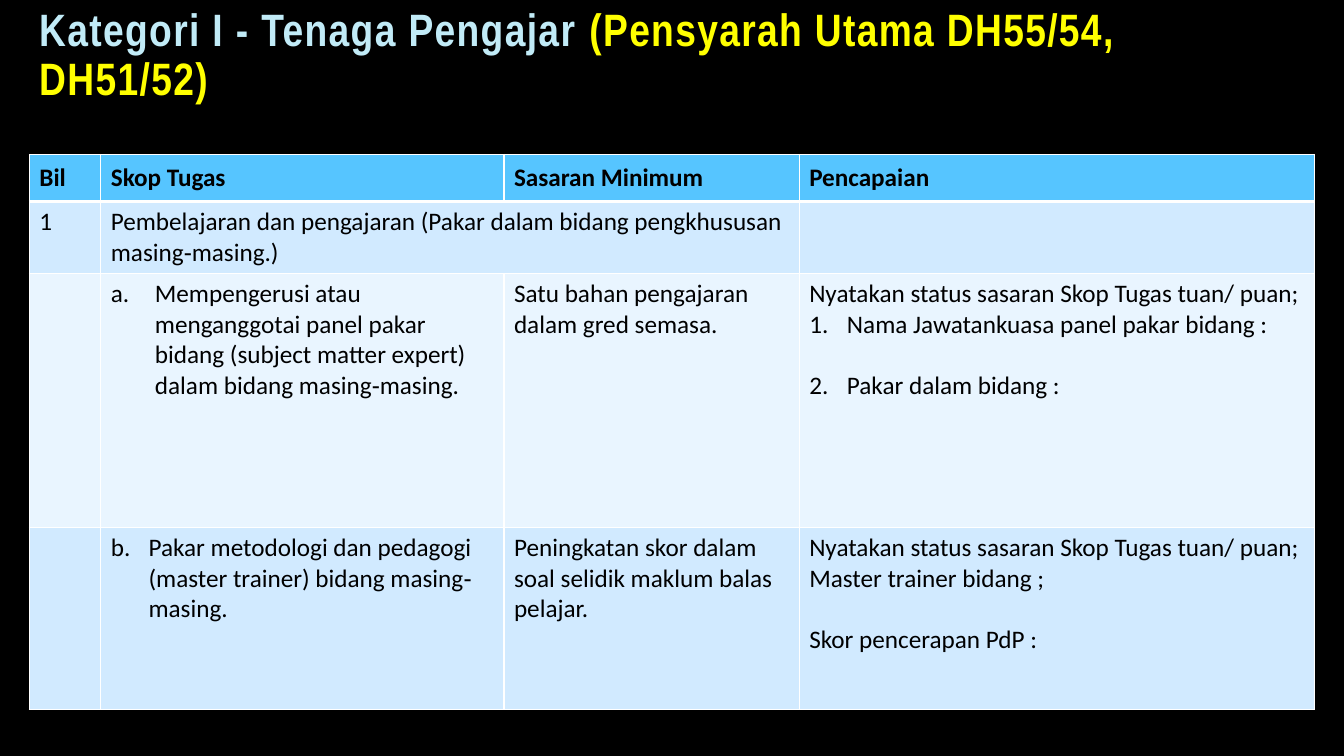
import pptx
import pptx.dml.color
import pptx.enum.text
import pptx.oxml
import pptx.util
from pptx.oxml.ns import qn

Cm, Pt = pptx.util.Cm, pptx.util.Pt
ANCHOR = pptx.enum.text.MSO_ANCHOR

COLOURS = {
    "background": "000000", "text": "000000", "border": "FFFFFF",
    "header": "56C5FF", "dark band": "D1EAFF", "light band": "E9F5FF",
    "title": "C1EBF7", "grade": "FFFF00", "outline": "404040",
}
TITLE_FORMAT = {"name": "Arial Narrow", "size": Pt(32.4), "bold": True}
CELL_FORMAT = {"name": "Calibri", "size": Pt(18), "bold": False}
LINE_GAP = Pt(22)


def rgb(key):
    return pptx.dml.color.RGBColor.from_string(COLOURS[key])


def add_xml(parent, tag, children="", **attributes):
    """Append one DrawingML element to parent."""
    values = "".join(f' {key}="{value}"' for key, value in attributes.items())
    parent.append(pptx.oxml.parse_xml(
        '<a:%s xmlns:a="http://schemas.openxmlformats.org/drawingml/2006/main"%s>%s</a:%s>'
        % (tag, values, children, tag)))


def solid(key, alpha=100):
    return (f'<a:solidFill><a:srgbClr val="{COLOURS[key]}">'
            f'<a:alpha val="{alpha * 1000}"/></a:srgbClr></a:solidFill>')


def apply_format(font, style, colour):
    for attribute, value in style.items():
        setattr(font, attribute, value)
    font.color.rgb = rgb(colour)


class DutySlide:
    def __init__(self, presentation):
        self.slide = presentation.slides.add_slide(presentation.slide_layouts[6])
        background = self.slide.background.fill
        background.solid()
        background.fore_color.rgb = rgb("background")

    def title(self, left, top, width, height, parts):
        box = self.slide.shapes.add_textbox(Cm(left), Cm(top), Cm(width), Cm(height))
        frame = box.text_frame
        frame.word_wrap = True
        frame.vertical_anchor = ANCHOR.BOTTOM
        heading = frame.paragraphs[0]
        heading.line_spacing = 0.9
        for text, colour in parts:
            run = heading.add_run()
            run.text = text
            properties = run._r.get_or_add_rPr()
            properties.set("spc", "100")
            add_xml(properties, "ln", solid("outline", 10), w=Pt(0.75))
            apply_format(run.font, TITLE_FORMAT, colour)

    def table(self, left, top, widths, heights, rows, bands):
        table = self.slide.shapes.add_table(
            len(rows), len(widths), Cm(left), Cm(top),
            Cm(sum(widths)), Cm(sum(heights))).table
        table.first_row = table.horz_banding = False
        for column, width in zip(table.columns, widths):
            column.width = Cm(width)
        for r, (entries, height, band) in enumerate(zip(rows, heights, bands)):
            table.rows[r].height = Cm(height)
            for c, entry in enumerate(entries):
                self.cell(table.cell(r, c), entry, r, band)
        return table

    def cell(self, cell, entry, row, band):
        # Borders, with a heavy rule under the header
        properties = cell._tc.get_or_add_tcPr()
        for side in "LRTB":
            heavy = (row, side) in ((0, "B"), (1, "T"))
            add_xml(properties, "ln" + side, solid("border"), w=Pt(3 if heavy else 1))
        cell.fill.solid()
        cell.fill.fore_color.rgb = rgb(band)
        if row == 0:
            cell.vertical_anchor = ANCHOR.MIDDLE
        # Wording
        for i, item in enumerate(entry if isinstance(entry, list) else [entry]):
            item = item if isinstance(item, dict) else {"text": item}
            frame = cell.text_frame
            paragraph = frame.paragraphs[0] if i == 0 else frame.add_paragraph()
            paragraph.text = item["text"]
            if "number" in item:
                self.numbering(paragraph, item)
            if "gap" in item:
                paragraph.space_before = item["gap"]
            apply_format(paragraph.font, {**CELL_FORMAT, "bold": row == 0}, "text")

    def numbering(self, paragraph, item):
        indent = Cm(item["indent"])
        properties = paragraph._p.get_or_add_pPr()
        properties.set("marL", str(indent))
        properties.set("indent", str(-indent))
        add_xml(properties, "buFont", typeface="+mj-lt")
        add_xml(properties, "buAutoNum", type=item["number"], startAt=item.get("start", 1))


def main():
    presentation = pptx.Presentation()
    presentation.slide_width, presentation.slide_height = Cm(33.87), Cm(19.05)
    duties = DutySlide(presentation)

    # Duties table
    letter, digit = "alphaLcPeriod", "arabicPeriod"
    status = "Nyatakan status sasaran Skop Tugas tuan/ puan;"
    rows = [
        ["Bil", "Skop Tugas", "Sasaran Minimum", "Pencapaian"],
        ["1", "Pembelajaran dan pengajaran (Pakar dalam bidang pengkhususan masing‐masing.)",
         "", ""],
        ["",
         {"text": "Mempengerusi atau menganggotai panel pakar bidang (subject matter expert) "
                  "dalam bidang masing‐masing.", "number": letter, "indent": 1.11},
         "Satu bahan pengajaran dalam gred semasa.",
         [status,
          {"text": "Nama Jawatankuasa panel pakar bidang :", "number": digit, "indent": 0.95},
          {"text": "Pakar dalam bidang :", "number": digit, "indent": 0.95,
           "gap": LINE_GAP}]],
        ["",
         {"text": "Pakar metodologi dan pedagogi (master trainer) bidang masing‐masing.",
          "number": letter, "indent": 0.95, "start": 2},
         "Peningkatan skor dalam soal selidik maklum balas pelajar.",
         [status, "Master trainer bidang ;",
          {"text": "Skor pencerapan PdP :", "gap": LINE_GAP}]],
    ]
    table = duties.table(
        0.74, 3.89, [1.8, 10.16, 7.44, 12.98], [1.19, 1.09, 6.4, 4.6], rows,
        ["header", "dark band", "light band", "dark band"])
    table.cell(1, 1).merge(table.cell(1, 2))

    # Title
    duties.title(0.74, 1.07, 28.88, 1.7, [
        ("Kategori I - Tenaga Pengajar ", "title"),
        ("(Pensyarah Utama DH55/54, DH51/52)", "grade")])

    presentation.save("out.pptx")


if __name__ == "__main__":
    main()
